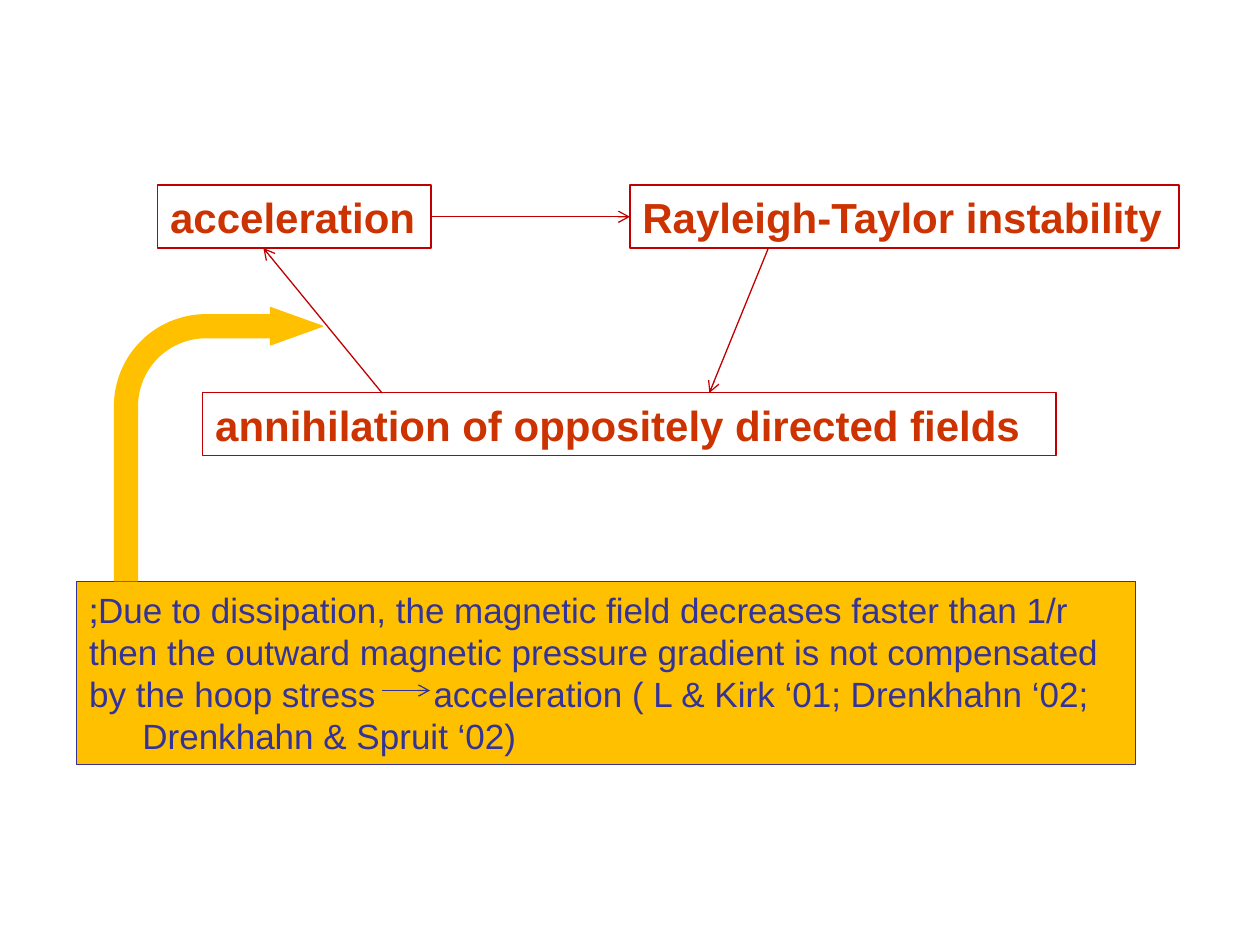
from dataclasses import dataclass

from lxml.etree import SubElement
from pptx import Presentation
from pptx.dml.color import RGBColor
from pptx.enum.shapes import MSO_CONNECTOR, MSO_SHAPE
from pptx.enum.text import MSO_ANCHOR, MSO_AUTO_SIZE, PP_ALIGN
from pptx.oxml.ns import qn
from pptx.util import Cm, Pt


@dataclass
class Theme:
    font: str = "Arial"
    red: RGBColor = RGBColor(0xC0, 0x00, 0x00)
    rust: RGBColor = RGBColor(0xCC, 0x33, 0x00)
    navy: RGBColor = RGBColor(0x33, 0x33, 0x99)
    gold: RGBColor = RGBColor(0xFF, 0xC0, 0x00)
    step: int = 24
    note: int = 20
    line: float = 0.75


class Board:
    def __init__(self, slide, theme):
        self.slide, self.theme = slide, theme

    def shape(self, kind, x, y, w, h, line, fill=None):
        item = self.slide.shapes.add_shape(kind, Cm(x), Cm(y), Cm(w), Cm(h))
        item.shadow.inherit = False
        if fill is None:
            item.fill.background()
        else:
            item.fill.solid()
            item.fill.fore_color.rgb = fill
        item.line.color.rgb = line
        item.line.width = Pt(self.theme.line)
        return item

    def frame(self, item, wrap):
        frame = item.text_frame
        frame.word_wrap = wrap
        frame.auto_size = MSO_AUTO_SIZE.SHAPE_TO_FIT_TEXT
        frame.vertical_anchor = MSO_ANCHOR.TOP
        return frame

    def label(self, para, text, size, color, bold=False):
        para.alignment = PP_ALIGN.LEFT
        run = para.add_run()
        run.text = text
        font = run.font
        font.name, font.size, font.bold = self.theme.font, Pt(size), bold
        font.color.rgb = color

    def step(self, text, x, y, w, wrap=False):
        look = self.theme
        box = self.shape(MSO_SHAPE.RECTANGLE, x, y, w, 1.27, look.red)
        para = self.frame(box, wrap).paragraphs[0]
        self.label(para, text, look.step, look.rust, True)

    def note(self, x, y, w, h, first, lines, stops):
        look = self.theme
        box = self.shape(MSO_SHAPE.RECTANGLE, x, y, w, h, look.navy, look.gold)
        frame = self.frame(box, True)
        # The opening line reads right to left, so its last mark comes first
        head = frame.paragraphs[0]
        self.label(head, first, look.note, look.navy)
        head._p.get_or_add_pPr().set("rtl", "1")
        # Tab stops leave room for the small arrow and the last line's indent
        body = frame.add_paragraph()
        tabs = SubElement(body._p.get_or_add_pPr(), qn("a:tabLst"))
        for stop in stops:
            SubElement(tabs, qn("a:tab"), pos=str(Cm(stop)), algn="l")
        for i, text in enumerate(lines):
            if i:
                body.add_line_break()
            self.label(body, text, look.note, look.navy)

    def arrow(self, start, end, color):
        ends = [Cm(v) for v in (*start, *end)]
        link = self.slide.shapes.add_connector(MSO_CONNECTOR.STRAIGHT, *ends)
        link.line.color.rgb = color
        link.line.width = Pt(self.theme.line)
        SubElement(link.line._get_or_add_ln(), qn("a:tailEnd"), type="arrow")
        SubElement(link._element.spPr, qn("a:effectLst"))

    def bend(self, x, y, w, h, adjust):
        gold = self.theme.gold
        item = self.shape(MSO_SHAPE.BENT_ARROW, x, y, w, h, gold, gold)
        for i, value in enumerate(adjust):
            item.adjustments[i] = value


def main():
    deck = Presentation()
    deck.slide_width, deck.slide_height = Cm(25.4), Cm(19.05)
    theme = Theme()
    board = Board(deck.slides.add_slide(deck.slide_layouts[6]), theme)

    # Steps of the cycle
    top, low = 3.73, 7.92
    board.step("acceleration", 3.18, top, 5.51)
    board.step("Rayleigh-Taylor instability", 12.7, top, 11.07)
    board.step("annihilation of oppositely directed fields", 4.09, low, 17.2, True)

    # Arrows of the cycle
    mid, base = top + 0.64, top + 1.27
    board.arrow((8.68, mid), (12.7, mid), theme.red)
    board.arrow((15.49, base), (14.3, low), theme.red)
    board.arrow((7.7, low), (5.31, base), theme.red)

    # Explanation with its inline arrow
    board.note(
        1.55, 11.73, 21.34, 3.68,
        "Due to dissipation, the magnetic field decreases faster than 1/r;",
        ["then the outward magnetic pressure gradient is not compensated "
         "by the hoop stress\tacceleration ( L & Kirk ‘01; Drenkhahn ‘02;",
         "\tDrenkhahn & Spruit ‘02)"],
        (1.07, 6.94),
    )
    board.bend(2.31, 6.2, 4.19, 5.51, (0.11, 0.09, 0.25, 0.44))
    board.arrow((7.7, 13.92), (8.67, 13.92), theme.navy)

    deck.save("out.pptx")


if __name__ == "__main__":
    main()
